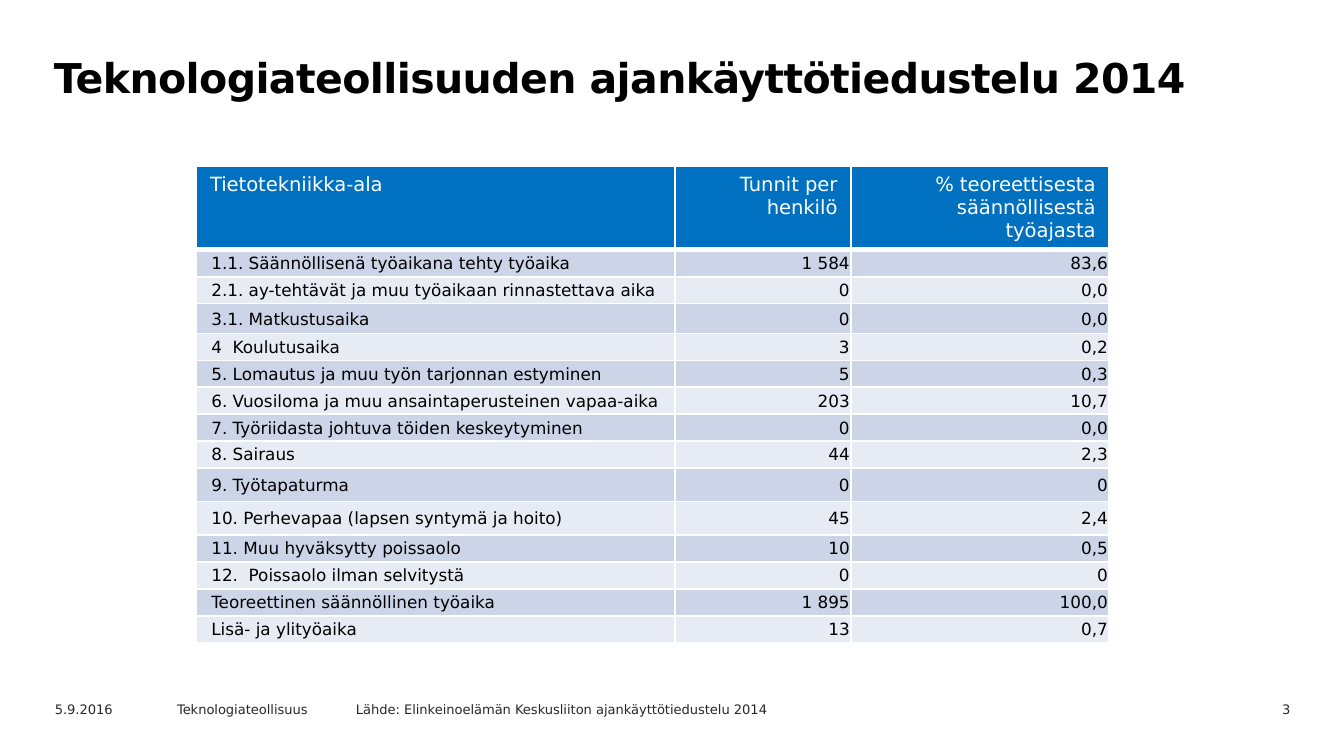
from lxml import etree
from pptx import Presentation
from pptx.dml.color import RGBColor
from pptx.enum.text import MSO_ANCHOR, MSO_AUTO_SIZE, PP_ALIGN
from pptx.oxml.ns import qn
from pptx.util import Pt

TOP, MIDDLE = MSO_ANCHOR.TOP, MSO_ANCHOR.MIDDLE
LEFT, RIGHT = PP_ALIGN.LEFT, PP_ALIGN.RIGHT
NO_FIT = MSO_AUTO_SIZE.NONE

BLACK = RGBColor(0x00, 0x00, 0x00)
WHITE = RGBColor(0xFF, 0xFF, 0xFF)
GREY = RGBColor(0x29, 0x28, 0x2E)
BLUE = RGBColor(0x00, 0x70, 0xC0)
DARK = RGBColor(0xCC, 0xD5, 0xE8)
LIGHT = RGBColor(0xE7, 0xEB, 0xF4)
FONT = "DejaVu Sans"

TITLE = "Teknologiateollisuuden ajankäyttötiedustelu 2014"
HEADS = ("Tietotekniikka-ala", "Tunnit per henkilö",
         "% teoreettisesta säännöllisestä työajasta")
ROWS = (
    ("1.1. Säännöllisenä työaikana tehty työaika", "1 584", "83,6"),
    ("2.1. ay-tehtävät ja muu työaikaan rinnastettava aika", "0", "0,0"),
    ("3.1. Matkustusaika", "0", "0,0"),
    ("4  Koulutusaika", "3", "0,2"),
    ("5. Lomautus ja muu työn tarjonnan estyminen", "5", "0,3"),
    ("6. Vuosiloma ja muu ansaintaperusteinen vapaa-aika", "203", "10,7"),
    ("7. Työriidasta johtuva töiden keskeytyminen", "0", "0,0"),
    ("8. Sairaus", "44", "2,3"),
    ("9. Työtapaturma", "0", "0"),
    ("10. Perhevapaa (lapsen syntymä ja hoito)", "45", "2,4"),
    ("11. Muu hyväksytty poissaolo", "10", "0,5"),
    ("12.  Poissaolo ilman selvitystä", "0", "0"),
    ("Teoreettinen säännöllinen työaika", "1 895", "100,0"),
    ("Lisä- ja ylityöaika", "13", "0,7"),
)
WIDTHS = (256.3, 94.3, 138.3)
HEAD_H, ROW_H = 44.6, 14.4
TALL = {3: 16, 9: 18, 10: 18}
FOOTS = (
    ("5.9.2016", 0, 72, LEFT),
    ("Teknologiateollisuus", 65.5, 102, LEFT),
    ("Lähde: Elinkeinoelämän Keskusliiton ajankäyttötiedustelu 2014",
     161.3, 244, LEFT),
    ("3", 608.4, 67.7, RIGHT),
)


def style(para, size, color, align=LEFT, indent=0):
    para.alignment = align
    if indent:
        para._p.get_or_add_pPr().set("marL", str(Pt(indent)))
    font = para.font
    font.name, font.size, font.color.rgb = FONT, Pt(size), color


def add_title(slide, left, top, width, height):
    title = slide.shapes.title
    title.left, title.top = Pt(left), Pt(top)
    title.width, title.height = Pt(width), Pt(height)
    frame = title.text_frame
    frame.text = TITLE
    frame.word_wrap, frame.auto_size = True, NO_FIT
    frame.vertical_anchor = TOP
    frame.margin_top = Pt(5.2)
    para = frame.paragraphs[0]
    style(para, 22, BLACK, indent=1.4)
    para.line_spacing = Pt(27)
    para.font.bold = True
    para.font._rPr.set("spc", "-30")


def add_edges(cell, top, bottom):
    props = cell._tc.get_or_add_tcPr()
    for side, width in (("L", 1), ("R", 1), ("T", top), ("B", bottom)):
        line = etree.SubElement(props, qn(f"a:ln{side}"), w=str(Pt(width)))
        fill = etree.SubElement(line, qn("a:solidFill"))
        etree.SubElement(fill, qn("a:srgbClr"), val=str(WHITE))


def fill_cell(cell, text, row, col):
    head = row == 0
    add_edges(cell, 3 if row == 1 else 1, 3 if head else 1)
    cell.fill.solid()
    cell.fill.fore_color.rgb = BLUE if head else DARK if row % 2 else LIGHT
    cell.text = text
    align = RIGHT if col else LEFT
    para = cell.text_frame.paragraphs[0]
    if head:
        style(para, 10.5, WHITE, align)
    else:
        cell.vertical_anchor = MIDDLE
        cell.margin_left = cell.margin_right = cell.margin_top = Pt(0.72)
        cell.margin_bottom = 0
        style(para, 9, BLACK, align, 7.2)


def add_grid(slide, left, top, width, height):
    data = (HEADS,) + ROWS
    table = slide.shapes.add_table(
        len(data), len(HEADS), Pt(left), Pt(top), Pt(width), Pt(height)).table
    for col, size in zip(table.columns, WIDTHS):
        col.width = Pt(size)
    for row, texts in enumerate(data):
        table.rows[row].height = Pt(TALL.get(row, ROW_H) if row else HEAD_H)
        for col, text in enumerate(texts):
            fill_cell(table.cell(row, col), text, row, col)


def add_footer(slide, left, top, height):
    for text, shift, width, align in FOOTS:
        box = slide.shapes.add_textbox(
            Pt(left + shift), Pt(top), Pt(width), Pt(height))
        frame = box.text_frame
        frame.word_wrap, frame.auto_size = True, NO_FIT
        frame.margin_bottom = 0
        frame.text = text
        style(frame.paragraphs[0], 7, GREY, align)


def main():
    deck = Presentation()
    deck.slide_width, deck.slide_height = Pt(720), Pt(405)
    slide = deck.slides.add_slide(deck.slide_layouts[5])
    add_title(slide, 20.2, 22.3, 629.3, 51.1)
    add_grid(slide, 105.3, 89.3, sum(WIDTHS), 255)
    add_footer(slide, 22.3, 372.2, 13)
    deck.save("out.pptx")


if __name__ == "__main__":
    main()
